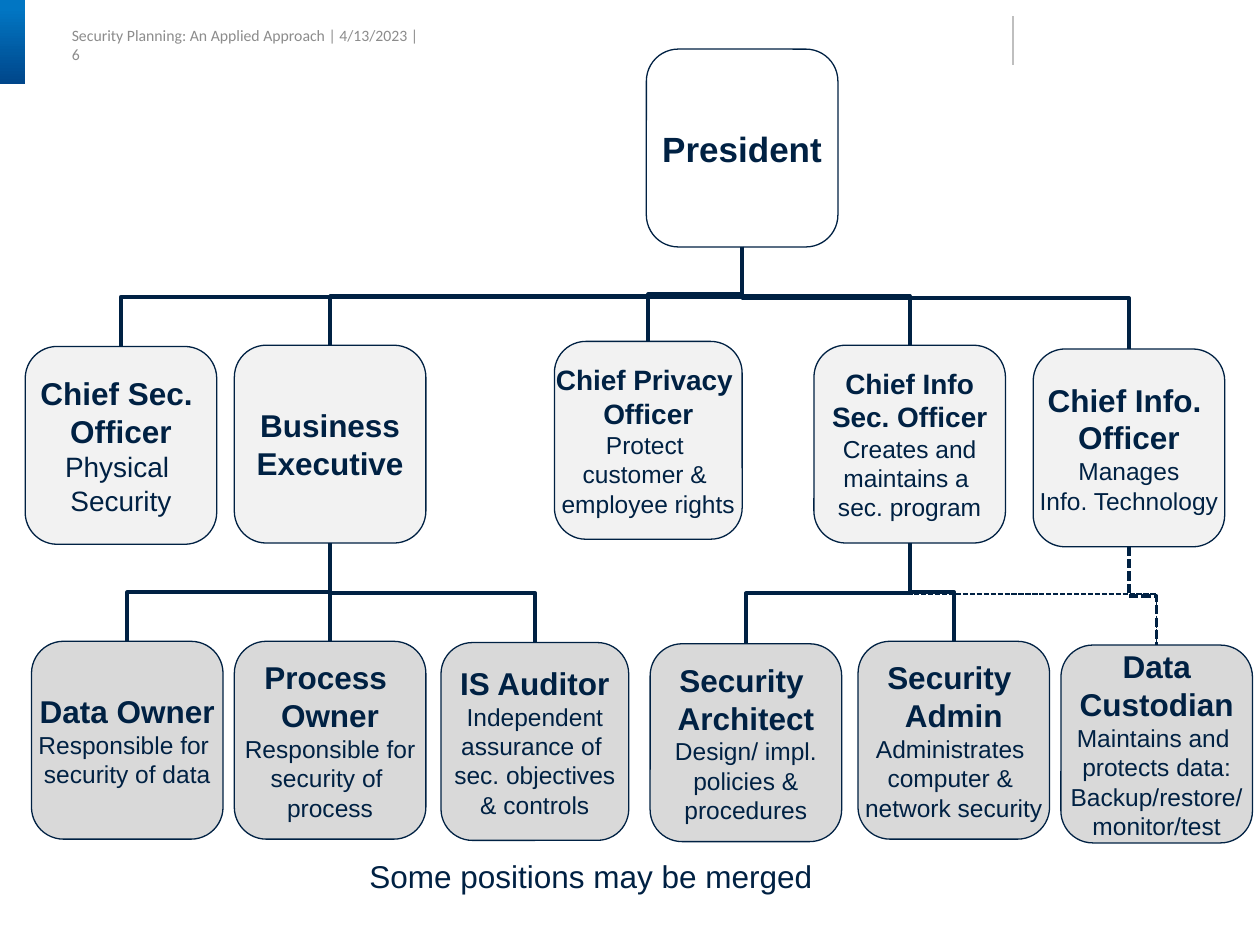
from dataclasses import dataclass
from lxml import etree
from pptx import Presentation, util as u
from pptx.dml.color import RGBColor
from pptx.enum import dml, shapes, text
from pptx.oxml.ns import qn


@dataclass
class Theme:
    ink: str = "002143"
    white: str = "FFFFFF"
    pale: str = "F2F2F2"
    mid: str = "D9D9D9"
    rule: str = "BFBFBF"
    grey: str = "8C8C8C"
    top: str = "0176C3"
    base: str = "00468A"
    font: str = "Arial"
    small: str = "Calibri"
    note: int = 9
    body: int = 14
    sub: int = 16
    head: int = 18
    big: int = 20


class Chart:
    def __init__(self, slide, theme):
        self.slide, self.theme = slide, theme

    def words(self, para, line, size, color, font, bold=False):
        run = para.add_run()
        run.text = line
        run.font.size, run.font.bold = u.Pt(size), bold
        run.font.name = font
        run.font.color.rgb = RGBColor.from_string(color)

    def round(self, x, y, w, h, adj):
        box = self.slide.shapes.add_shape(
            shapes.MSO_SHAPE.ROUNDED_RECTANGLE, *map(u.Inches, (x, y, w, h)))
        box.adjustments[0] = adj
        box.shadow.inherit = False
        return box

    def tab(self, x, y, w, h):
        """Gradient tab in the corner."""
        box = self.round(x, y, w, h, 0)
        box.line.fill.background()
        box.fill.gradient()
        box.fill.gradient_angle = 270
        stops = zip(box.fill.gradient_stops, (0.1, 1), (self.theme.top, self.theme.base))
        for stop, pos, color in stops:
            stop.position = pos
            stop.color.rgb = RGBColor.from_string(color)

    def role(self, x, y, w, fill, head, size, duty="", small=None):
        """One position: bold name lines, then plain duty lines."""
        t = self.theme
        box = self.round(x, y, w, 1.57, 0.167)
        box.fill.solid()
        box.fill.fore_color.rgb = RGBColor.from_string(fill)
        box.line.color.rgb = RGBColor.from_string(t.ink)
        box.line.width = u.Pt(0.75)
        frame = box.text_frame
        frame.word_wrap = False
        frame.vertical_anchor = text.MSO_ANCHOR.MIDDLE
        frame.margin_left = frame.margin_right = frame.margin_top = frame.margin_bottom = 0
        rows = [(line, size, True) for line in head.split("|")]
        if duty:
            rows += [(line, small or t.body, False) for line in duty.split("|")]
        for i, (line, pts, bold) in enumerate(rows):
            para = frame.add_paragraph() if i else frame.paragraphs[0]
            para.alignment = text.PP_ALIGN.CENTER
            self.words(para, line, pts, t.ink, t.font, bold)
        return box

    def label(self, x, y, w, h, line, size, color, font):
        box = self.slide.shapes.add_textbox(*map(u.Inches, (x, y, w, h)))
        box.text_frame.word_wrap = False
        self.words(box.text_frame.paragraphs[0], line, size, color, font)
        return box.text_frame

    def line(self, kind, ends, color, width):
        line = self.slide.shapes.add_connector(kind, *ends)
        line.line.color.rgb = RGBColor.from_string(color)
        line.line.width = u.Pt(width)
        etree.SubElement(line._element.spPr, qn("a:effectLst"))
        return line

    def link(self, boss, staff, width=2.25, dash=False):
        """Elbow from the foot of one box to the top of another."""
        x, y = boss.left + boss.width // 2, boss.top + boss.height
        dx, dy = staff.left + staff.width // 2 - x, staff.top - y
        level = abs(dx) < u.Inches(0.02)
        kind = shapes.MSO_CONNECTOR.STRAIGHT if level else shapes.MSO_CONNECTOR.ELBOW
        line = self.line(kind, (x, y, x + dx, y + dy), self.theme.ink, width)
        line.begin_connect(boss, 2)
        line.end_connect(staff, 0)
        if dash:
            line.line.dash_style = dml.MSO_LINE.SQUARE_DOT
        if not level:
            # Lay the elbow on its side so that it leaves downwards
            line.left, line.top = x + (dx - dy) // 2, y + (dy - abs(dx)) // 2
            line.width, line.height = dy, abs(dx)
            form = line._element.spPr.find(qn("a:xfrm"))
            form.set("rot", "16200000" if dx > 0 else "5400000")
            form.set("flipH", "1" if dx > 0 else "0")
            form.set("flipV", "0")


def main():
    deck = Presentation()
    deck.slide_width, deck.slide_height = u.Inches(10), u.Inches(7.5)
    t = Theme()
    c = Chart(deck.slides.add_slide(deck.slide_layouts[6]), t)

    # Page header
    frame = c.label(0.57, 0.23, 2.84, 0.23,
                    "Security Planning: An Applied Approach | 4/13/2023 | 6",
                    t.note, t.grey, t.small)
    frame.margin_left = frame.margin_right = 0
    frame.margin_top, frame.margin_bottom = u.Inches(0.06), u.Inches(0.04)
    frame.vertical_anchor = text.MSO_ANCHOR.MIDDLE
    c.tab(0, 0, 0.2, 0.67)
    c.line(shapes.MSO_CONNECTOR.STRAIGHT,
           map(u.Inches, (8.04, 0.13, 8.04, 0.52)), t.rule, 0.75)

    # Top of the tree
    chief = c.role(5.13, 0.39, 1.52, t.white, "President", t.big)

    # Officers
    staff = [c.role(x, y, w, t.pale, *lines) for x, y, w, *lines in (
        (0.2, 2.75, 1.52, "Chief Sec. |Officer", t.head, "Physical |Security", t.sub),
        (1.86, 2.74, 1.52, "Business|Executive", t.head),
        (4.4, 2.71, 1.49, "Chief Privacy |Officer", t.sub,
         "Protect |customer & |employee rights"),
        (6.46, 2.74, 1.52, "Chief Info|Sec. Officer", t.sub,
         "Creates and|maintains a |sec. program"),
        (8.2, 2.77, 1.52, "Chief Info. |Officer", t.head, "Manages|Info. Technology"),
    )]

    # Teams
    teams = [c.role(x, y, w, t.mid, head, t.head, duty) for x, y, w, head, duty in (
        (0.25, 5.09, 1.52, "Data Owner", "Responsible for |security of data"),
        (1.86, 5.09, 1.52, "Process |Owner", "Responsible for|security of |process"),
        (3.5, 5.1, 1.49, "IS Auditor",
         "Independent|assurance of |sec. objectives|& controls"),
        (5.16, 5.11, 1.52, "Security |Architect", "Design/ impl.|policies &|procedures"),
        (6.81, 5.09, 1.52, "Security |Admin",
         "Administrates |computer & |network security"),
        (8.42, 5.12, 1.52, "Data|Custodian",
         "Maintains and |protects data:|Backup/restore/|monitor/test"),
    )]

    # Reporting lines, dashed where shared
    for box in staff:
        c.link(chief, box)
    for box in teams[:3]:
        c.link(staff[1], box)
    for box in teams[3:5]:
        c.link(staff[3], box)
    c.link(staff[3], teams[5], 1, True)
    c.link(staff[4], teams[5], 1.75, True)

    # Closing remark
    frame = c.label(2.83, 6.75, 3.72, 0.4, "Some positions may be merged",
                    t.head, t.ink, t.font)
    frame.paragraphs[0].alignment = text.PP_ALIGN.CENTER
    deck.save("out.pptx")


if __name__ == "__main__":
    main()
